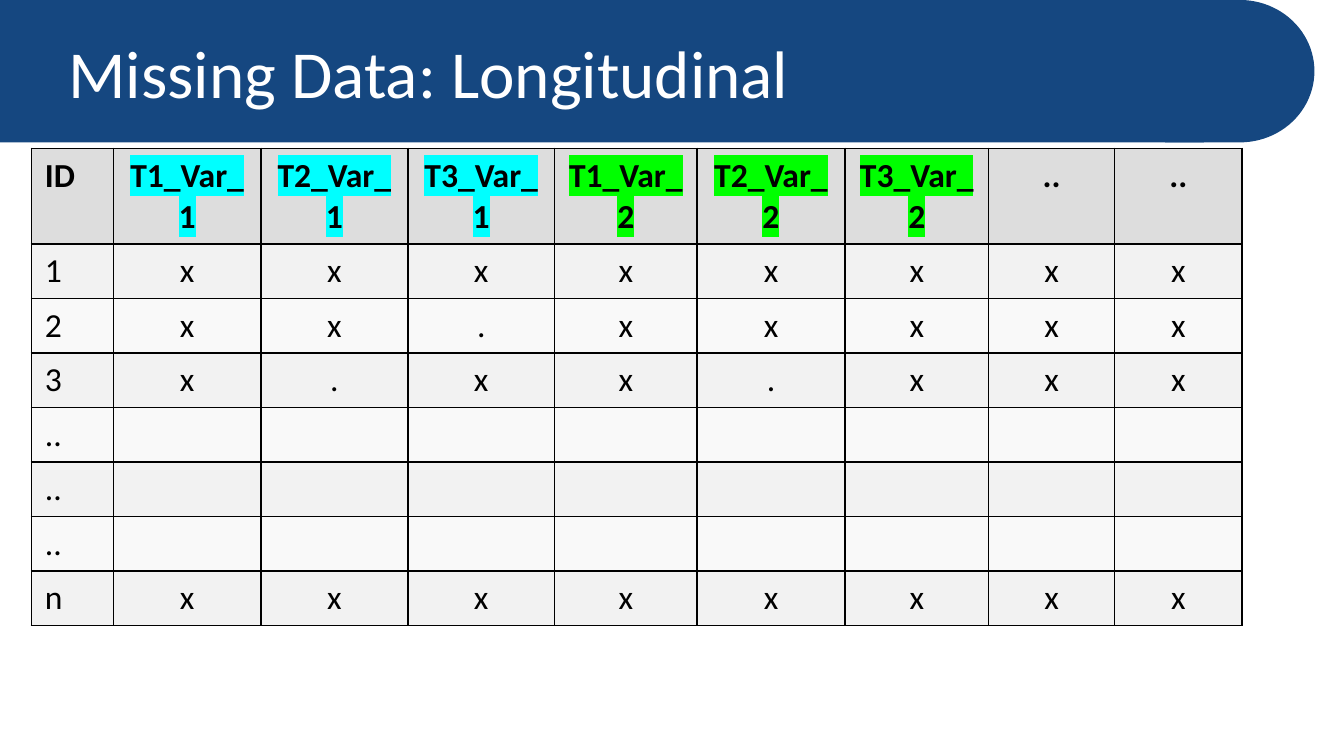
from lxml import etree
from pptx import Presentation
from pptx.dml.color import RGBColor
from pptx.enum.shapes import MSO_SHAPE
from pptx.enum.text import MSO_ANCHOR, PP_ALIGN
from pptx.oxml.ns import qn
from pptx.util import Pt

LEFT, CENTER = PP_ALIGN.LEFT, PP_ALIGN.CENTER
MIDDLE = MSO_ANCHOR.MIDDLE
RECTANGLE, ROUND_END = MSO_SHAPE.RECTANGLE, MSO_SHAPE.FLOWCHART_DELAY

FONT = "Calibri"
BLUE = RGBColor(0x15, 0x47, 0x80)
WHITE = RGBColor(0xFF, 0xFF, 0xFF)
BLACK = RGBColor(0x00, 0x00, 0x00)
CYAN = RGBColor(0x00, 0xFF, 0xFF)
GREEN = RGBColor(0x00, 0xFF, 0x00)
HEADER_GREY = RGBColor(0xDD, 0xDD, 0xDD)
ODD_GREY = RGBColor(0xF2, 0xF2, 0xF2)
EVEN_GREY = RGBColor(0xF9, 0xF9, 0xF9)


def write_text(frame, text, size=18, color=BLACK, bold=False, align=LEFT, highlight=None):
    para = frame.paragraphs[0]
    para.alignment = align
    span = para.add_run()
    span.text = text
    span.font.size = Pt(size)
    span.font.bold = bold
    span.font.color.rgb = color
    if highlight is not None:
        mark = etree.SubElement(span.font._element, qn("a:highlight"))
        etree.SubElement(mark, qn("a:srgbClr"), val=str(highlight))
    span.font.name = FONT


def add_borders(cell):
    properties = cell._tc.get_or_add_tcPr()
    for side in ("lnL", "lnR", "lnT", "lnB"):
        line = etree.SubElement(properties, qn(f"a:{side}"), w=str(Pt(1)))
        fill = etree.SubElement(line, qn("a:solidFill"))
        etree.SubElement(fill, qn("a:srgbClr"), val=str(BLACK))


deck = Presentation()
deck.slide_width, deck.slide_height = Pt(720), Pt(405)
page = deck.slides.add_slide(deck.slide_layouts[5])

# Banner, behind the title
for position, (kind, left, width) in enumerate([(ROUND_END, 624.2, 80), (RECTANGLE, 0, 645)]):
    banner = page.shapes.add_shape(kind, Pt(left), 0, Pt(width), Pt(76.3))
    banner.shadow.inherit = False
    banner.fill.solid()
    banner.fill.fore_color.rgb = BLUE
    banner.line.fill.background()
    page.shapes._spTree.insert(2 + position, banner._element)

title = page.shapes.title
title.left, title.top, title.width, title.height = Pt(29.5), Pt(4.5), Pt(630), Pt(67.5)
title.text_frame.vertical_anchor = MIDDLE
write_text(title.text_frame, "Missing Data: Longitudinal", size=36, color=WHITE)

# Data table
COLUMN_WIDTHS = [44, 79, 78.7, 78.7, 76.3, 79.2, 77, 67.5, 68.3]
ROW_HEIGHT = 29.2
HIGHLIGHTS = {"_1": CYAN, "_2": GREEN}
header = ["ID"] + [f"T{time}_Var_{var}" for var in (1, 2) for time in (1, 2, 3)] + ["..", ".."]
rows = [
    header,
    ["1"] + list("xxxxxxxx"),
    ["2"] + list("xx.xxxxx"),
    ["3"] + list("x.xx.xxx"),
    *[[".."] + [""] * 8 for _ in range(3)],
    ["n"] + list("xxxxxxxx"),
]

table_frame = page.shapes.add_table(
    len(rows), len(header), Pt(16.8), Pt(79.5), Pt(sum(COLUMN_WIDTHS)), Pt(ROW_HEIGHT * len(rows))
)
table = table_frame.table
for column, width in zip(table.columns, COLUMN_WIDTHS):
    column.width = Pt(width)
for row in table.rows:
    row.height = Pt(ROW_HEIGHT)
table_frame.height = Pt(255)  # the header wraps to two lines

for row_number, row in enumerate(rows):
    is_header = row_number == 0
    shade = HEADER_GREY if is_header else (EVEN_GREY, ODD_GREY)[row_number % 2]
    for column_number, text in enumerate(row):
        cell = table.cell(row_number, column_number)
        add_borders(cell)
        cell.fill.solid()
        cell.fill.fore_color.rgb = shade
        if text:
            write_text(
                cell.text_frame,
                text,
                bold=is_header,
                align=CENTER if column_number else LEFT,
                highlight=HIGHLIGHTS.get(text[-2:]),
            )

deck.save("out.pptx")
